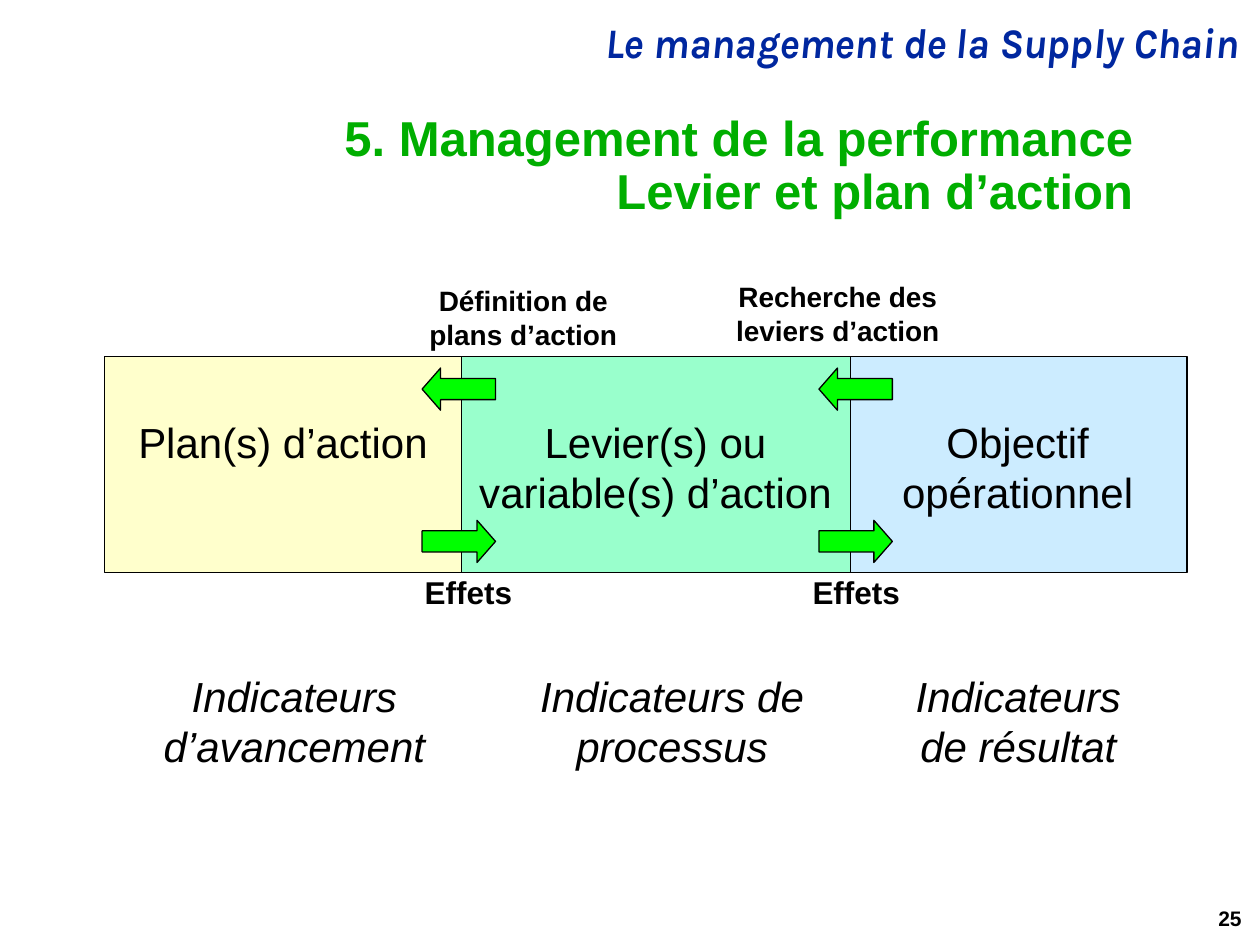
from pptx import Presentation
from pptx.dml.color import RGBColor
from pptx.enum.shapes import MSO_SHAPE
from pptx.enum.text import MSO_ANCHOR, PP_ALIGN
from pptx.util import Cm, Pt


def color(value):
    return RGBColor.from_string(value)


def write(frame, text, size, align=PP_ALIGN.CENTER, tint="000000", font="Arial",
          bold=False, italic=False, spacing=None, anchor=MSO_ANCHOR.TOP, wrap=True):
    frame.word_wrap = wrap
    frame.vertical_anchor = anchor
    paragraph = frame.paragraphs[0]
    paragraph.text = text
    paragraph.alignment = align
    paragraph.line_spacing = spacing
    paragraph.font.name = font
    paragraph.font.size = Pt(size)
    paragraph.font.bold = bold
    paragraph.font.italic = italic
    paragraph.font.color.rgb = color(tint)


def add_text(slide, left, top, width, height, text, size, **style):
    box = slide.shapes.add_textbox(Cm(left), Cm(top), Cm(width), Cm(height))
    write(box.text_frame, text, size, **style)


def add_block(slide, kind, left, top, width, height, fill):
    block = slide.shapes.add_shape(kind, Cm(left), Cm(top), Cm(width), Cm(height))
    block.shadow.inherit = False
    block.fill.solid()
    block.fill.fore_color.rgb = color(fill)
    block.line.color.rgb = color("000000")
    block.line.width = Pt(0.75)
    return block


def add_headings(slide, left, top, width):
    heading = dict(align=PP_ALIGN.RIGHT, bold=True, spacing=0.9)
    add_text(slide, left + 1.73, top, width - 1.73, 1.17, "Le management de la Supply Chain",
             24, tint="00279F", font="Karla", italic=True, **heading)
    add_text(slide, left, top + 2.41, 20.12, 1.27,
             "5. Management de la performance\nLevier et plan d’action",
             28, tint="00AE00", anchor=MSO_ANCHOR.MIDDLE, **heading)


def add_stage(slide, left, top, width, height, label, fill):
    stage = add_block(slide, MSO_SHAPE.RECTANGLE, left, top, width, height, fill)
    stage.text_frame.margin_top = Cm(1.2)
    write(stage.text_frame, label, 24)


def add_transition(slide, left, top):
    for kind, offset in ((MSO_SHAPE.LEFT_ARROW, 0.23), (MSO_SHAPE.RIGHT_ARROW, 3.3)):
        arrow = add_block(slide, kind, left, top + offset, 1.48, 0.85, "00FF00")
        arrow.adjustments[0] = 0.5
        arrow.adjustments[1] = 0.438


def add_chain(slide, left, top, height):
    stages = (
        (14.99, 6.83, "Objectif\nopérationnel", "CCECFF"),
        (7.17, 7.87, "Levier(s) ou variable(s) d’action", "99FFCC"),
        (0, 7.19, "Plan(s) d’action", "FFFFCC"),
    )
    for offset, width, label, fill in stages:
        add_stage(slide, left + offset, top, width, height, label, fill)

    transitions = (
        (6.4, 6.28, -1.6, 4.32, "Définition de\nplans d’action"),
        (14.4, 12.47, -1.68, 4.62, "Recherche des\nleviers d’action"),
    )
    for arrow_left, cause_left, cause_top, cause_width, cause in transitions:
        add_transition(slide, left + arrow_left, top)
        add_text(slide, left + cause_left, top + cause_top, cause_width, 1.62,
                 cause, 16, bold=True, wrap=False)
    for effect_left in (6.2, 14.02):
        add_text(slide, left + effect_left, top + 4.24, 2.29, 1.02, "Effets", 18,
                 align=PP_ALIGN.LEFT, bold=True, wrap=False)


def add_indicators(slide, left, top):
    indicators = (
        (0, 7.85, "Indicateurs\nd’avancement"),
        (8.15, 6.78, "Indicateurs de\nprocessus"),
        (15.13, 6.78, "Indicateurs\nde résultat"),
    )
    for offset, width, label in indicators:
        add_text(slide, left + offset, top, width, 2.29, label, 24, italic=True)


def add_page_number(slide, left, top, width, height):
    add_text(slide, left, top, width, height, "25", 12, align=PP_ALIGN.RIGHT,
             bold=True, spacing=0.9, anchor=MSO_ANCHOR.MIDDLE)


def main():
    presentation = Presentation()
    presentation.slide_width = Cm(25.4)
    presentation.slide_height = Cm(19.05)
    slide = presentation.slides.add_slide(presentation.slide_layouts[6])
    add_headings(slide, 2.97, 0.33, 22.25)
    add_chain(slide, 2.11, 7.19, 4.35)
    add_indicators(slide, 2.01, 13.39)
    add_page_number(slide, 19.56, 18.03, 5.72, 1.02)
    presentation.save("out.pptx")


if __name__ == "__main__":
    main()
